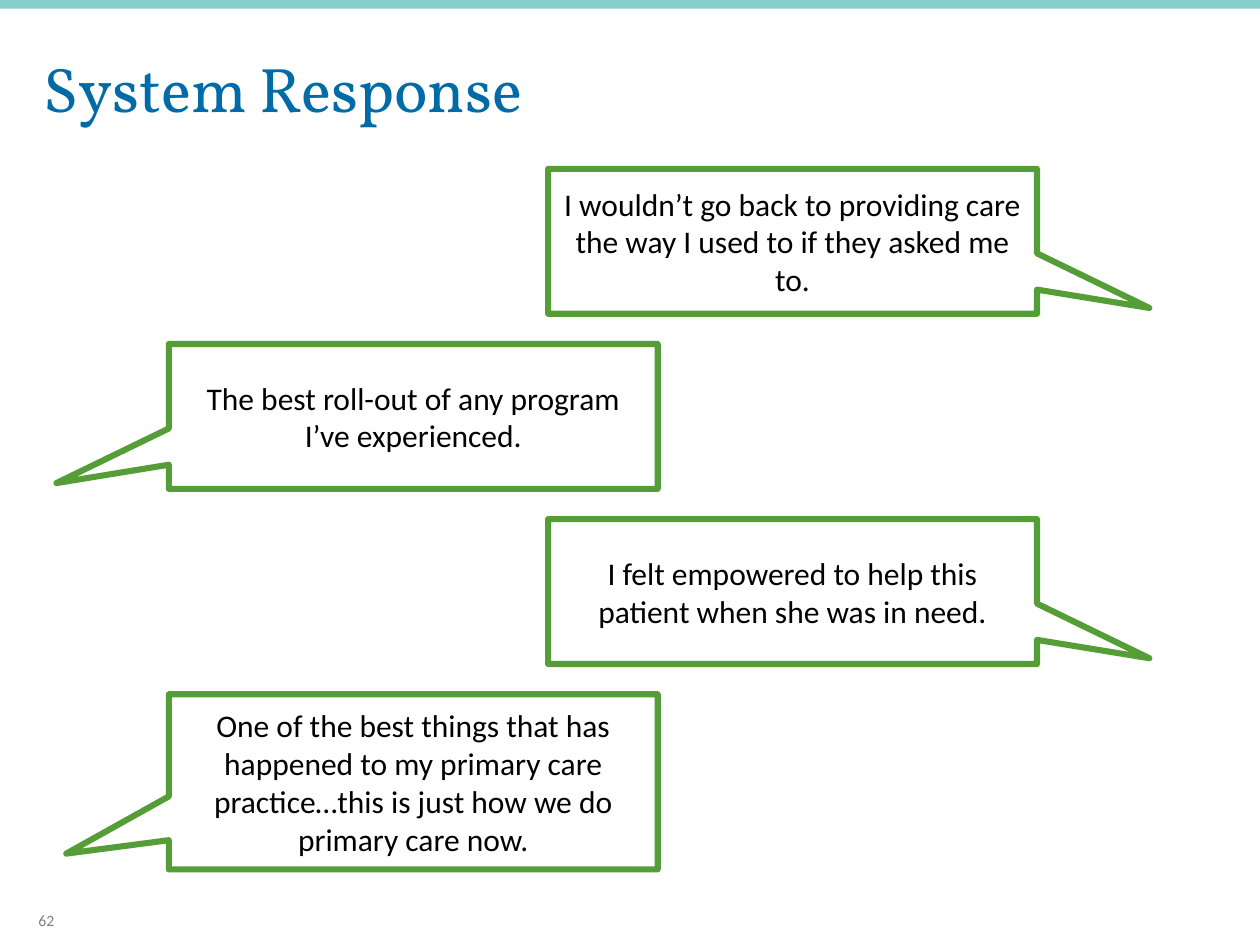
from pptx import Presentation
from pptx.dml.color import RGBColor
from pptx.enum.shapes import MSO_SHAPE
from pptx.enum.text import MSO_ANCHOR, PP_ALIGN
from pptx.util import Inches, Pt

COLORS = {
    "band": "85CFCD",
    "title": "006BA6",
    "number": "808080",
    "callout": "559D37",
    "quote": "000000",
}
LEFT_COLUMN = 1.34
RIGHT_COLUMN = 4.35
FIRST_TOP = 1.34
ROW_STEP = 1.39
CALLOUT_WIDTH = 3.88

QUOTES = [
    ("I wouldn’t go back to providing care the way I used to if they asked me to.", 1.15, 0.73, 0.46),
    ("The best roll-out of any program I’ve experienced.", 1.15, -0.73, 0.46),
    ("I felt empowered to help this patient when she was in need.", 1.15, 0.73, 0.46),
    ("One of the best things that has happened to my primary care practice…this is just how we do primary care now.",
     1.39, -0.71, 0.41),
]


def color(name):
    return RGBColor.from_string(COLORS[name])


def write_text(shape, text, size, font_name, color_name, alignment, anchor):
    frame = shape.text_frame
    frame.word_wrap = True
    frame.vertical_anchor = anchor
    paragraph = frame.paragraphs[0]
    paragraph.alignment = alignment
    run = paragraph.add_run()
    run.text = text
    run.font.size = Pt(size)
    run.font.name = font_name
    run.font.color.rgb = color(color_name)
    return paragraph


def add_band(slide, left, top, width, height):
    band = slide.shapes.add_shape(
        MSO_SHAPE.RECTANGLE, Inches(left), Inches(top), Inches(width), Inches(height))
    band.shadow.inherit = False
    band.fill.solid()
    band.fill.fore_color.rgb = color("band")
    band.line.fill.background()


def add_title(slide, left, top, width, height):
    title = slide.shapes.add_textbox(Inches(left), Inches(top), Inches(width), Inches(height))
    paragraph = write_text(title, "System Response", 36, "Vollkorn", "title",
                           PP_ALIGN.LEFT, MSO_ANCHOR.BOTTOM)
    paragraph.line_spacing = 0.8


def add_slide_number(slide, left, top, width, height):
    number = slide.shapes.add_textbox(Inches(left), Inches(top), Inches(width), Inches(height))
    write_text(number, "62", 9, "Calibri", "number", PP_ALIGN.RIGHT, MSO_ANCHOR.MIDDLE)


def add_callout(slide, left, top, width, height, text, tip_x, tip_y):
    callout = slide.shapes.add_shape(
        MSO_SHAPE.RECTANGULAR_CALLOUT, Inches(left), Inches(top), Inches(width), Inches(height))
    callout.adjustments[0] = tip_x
    callout.adjustments[1] = tip_y
    callout.shadow.inherit = False
    callout.fill.background()
    callout.line.color.rgb = color("callout")
    callout.line.width = Pt(3.5)
    write_text(callout, text, 18, "Calibri", "quote", PP_ALIGN.CENTER, MSO_ANCHOR.MIDDLE)


def add_quotes(slide, top):
    for row, (text, height, tip_x, tip_y) in enumerate(QUOTES):
        left = RIGHT_COLUMN if tip_x > 0 else LEFT_COLUMN
        add_callout(slide, left, top + row * ROW_STEP, CALLOUT_WIDTH, height, text, tip_x, tip_y)


def main():
    presentation = Presentation()
    presentation.slide_width = Inches(10)
    presentation.slide_height = Inches(7.5)
    slide = presentation.slides.add_slide(presentation.slide_layouts[6])
    add_band(slide, 0, 0, 10, 0.07)
    add_title(slide, 0.25, 0.17, 8.5, 0.87)
    add_slide_number(slide, 0.12, 7.21, 0.41, 0.18)
    add_quotes(slide, FIRST_TOP)
    presentation.save("out.pptx")


if __name__ == "__main__":
    main()
